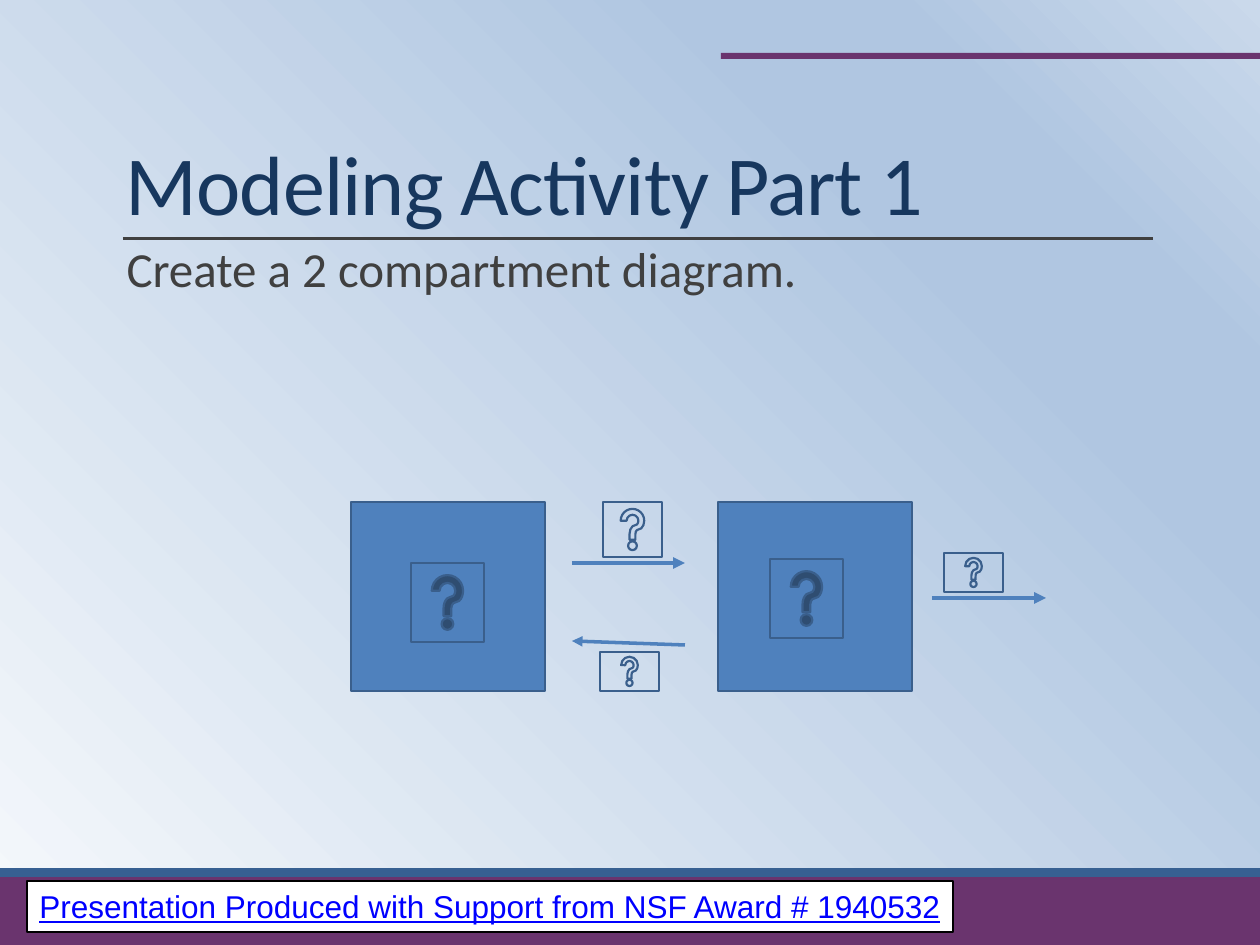
from dataclasses import dataclass
from typing import Optional

import lxml.etree
import pptx
import pptx.dml.color
import pptx.enum.shapes
import pptx.enum.text
import pptx.oxml
import pptx.oxml.ns
import pptx.util

RGBColor = pptx.dml.color.RGBColor
SHAPES = pptx.enum.shapes.MSO_SHAPE
ANCHOR = pptx.enum.text.MSO_ANCHOR

PURPLE = RGBColor(0x6A, 0x34, 0x6E)
STEEL = RGBColor(0x37, 0x60, 0x92)
BLUE = RGBColor(0x4F, 0x81, 0xBD)
EDGE = RGBColor(0x3A, 0x5F, 0x8C)
NAVY = RGBColor(0x17, 0x37, 0x5E)
GREY = RGBColor(0x40, 0x40, 0x40)
LINK = RGBColor(0x00, 0x00, 0xFF)
WHITE = RGBColor(0xFF, 0xFF, 0xFF)
BLACK = RGBColor(0x00, 0x00, 0x00)

GRADIENT = [(0, "F6F9FC"), (74, "B0C6E1"), (83, "B0C6E1"), (100, "CAD9EB")]
PX_PER_INCH = 126
SQUARE_TOP, SQUARE_WIDTH, SQUARE_HEIGHT = 502, 194, 189


@dataclass
class Block:
    left: int
    top: int
    width: int
    height: int
    fill: Optional[RGBColor] = None
    edge: Optional[RGBColor] = None
    kind: int = SHAPES.RECTANGLE


@dataclass
class Line:
    start: tuple[int, int]
    end: tuple[int, int]
    color: RGBColor = BLUE
    weight: float = 2.25
    arrow: bool = True


def px(length: int) -> int:
    return round(length * pptx.util.Inches(1) / PX_PER_INCH)


def place(shape, left: int, top: int, width: int, height: int) -> None:
    shape.left, shape.top = px(left), px(top)
    shape.width, shape.height = px(width), px(height)


def add_xml(parent, markup: str):
    """Append DrawingML markup, whose prefix is a, to an element."""
    namespace = pptx.oxml.ns.nsdecls("a")
    head, mark, rest = markup.partition(">")
    if head.endswith("/"):
        head, mark = head[:-1], "/>"
    element = pptx.oxml.parse_xml(f"{head} {namespace}{mark}{rest}")
    parent.append(element)
    return element


def draw_block(slide, block: Block):
    shape = slide.shapes.add_shape(
        block.kind, px(block.left), px(block.top), px(block.width), px(block.height))
    shape.shadow.inherit = False
    if block.fill is None:
        shape.fill.background()
    else:
        shape.fill.solid()
        shape.fill.fore_color.rgb = block.fill
    if block.edge is None:
        shape.line.fill.background()
    else:
        shape.line.color.rgb = block.edge
        shape.line.width = pptx.util.Pt(1.25)
    return shape


def draw_line(slide, line: Line) -> None:
    connector = slide.shapes.add_connector(
        pptx.enum.shapes.MSO_CONNECTOR.STRAIGHT,
        *map(px, line.start), *map(px, line.end))
    connector.line.color.rgb = line.color
    connector.line.width = pptx.util.Pt(line.weight)
    if line.arrow:
        add_xml(connector.line._get_or_add_ln(), '<a:tailEnd type="triangle"/>')
    add_xml(connector._element.spPr, "<a:effectLst/>")


def write_text(shape, text: str, *, size: float, color: RGBColor, font: str = "Calibri",
               anchor=ANCHOR.TOP, wrap: bool = True, underline: bool = False,
               line_spacing: float = 1.0, space_after: float = 0,
               tracking: int = 0, side_inset: Optional[int] = None) -> None:
    frame = shape.text_frame
    frame.auto_size = pptx.enum.text.MSO_AUTO_SIZE.NONE
    frame.word_wrap = wrap
    frame.vertical_anchor = anchor
    if side_inset is not None:
        frame.margin_left = frame.margin_right = px(side_inset)
    para = frame.paragraphs[0]
    para.alignment = pptx.enum.text.PP_ALIGN.LEFT
    para.line_spacing = line_spacing
    para.space_before = pptx.util.Pt(0)
    para.space_after = pptx.util.Pt(space_after)
    span = para.add_run()
    span.text = text
    span.font.name = font
    span.font.size = pptx.util.Pt(size)
    span.font.color.rgb = color
    span.font.underline = underline
    if tracking:
        span.font._element.set("spc", str(tracking))


def set_background(slide) -> None:
    slide.background.fill.gradient()
    gradient = slide.background._cSld.bg.bgPr.find(pptx.oxml.ns.qn("a:gradFill"))
    for child in list(gradient):
        gradient.remove(child)
    stops = "".join(
        f'<a:gs pos="{position * 1000}"><a:srgbClr val="{color}"/></a:gs>'
        for position, color in GRADIENT)
    add_xml(gradient, f"<a:gsLst>{stops}</a:gsLst>")
    add_xml(gradient, '<a:lin ang="18900000" scaled="0"/>')


def set_blank_bullet(para) -> None:
    properties = para._p.get_or_add_pPr()
    properties.set("marL", str(pptx.util.Inches(0.1)))
    properties.set("indent", str(-pptx.util.Inches(0.1)))
    add_xml(properties, '<a:buClr><a:srgbClr val="4F81BD"/></a:buClr>')
    add_xml(properties, '<a:buChar char=" "/>')


def main() -> None:
    deck = pptx.Presentation()
    deck.slide_width = pptx.util.Inches(10)
    deck.slide_height = pptx.util.Inches(7.5)
    page = deck.slides.add_slide(deck.slide_layouts[1])
    set_background(page)

    # Frame: footer bar, top accent, footer stripe, rule under the title
    for bar in (Block(0, 872, 1260, 73, PURPLE),
                Block(721, 53, 539, 6, PURPLE),
                Block(0, 868, 1260, 9, STEEL)):
        draw_block(page, bar)
    draw_line(page, Line((123, 239), (1153, 239), GREY, 1.75, arrow=False))

    # Funding credit
    credit = draw_block(page, Block(27, 881, 926, 51, WHITE, BLACK))
    write_text(credit, "Presentation Produced with Support from NSF Award # 1940532",
               size=18, color=LINK, font="Arial", wrap=False, underline=True)

    # Title and instruction
    title, body = page.shapes.title, page.placeholders[1]
    place(title, 113, 39, 1040, 200)
    write_text(title, "Modeling Activity Part 1", size=48, color=NAVY,
               anchor=ANCHOR.BOTTOM, line_spacing=0.85, tracking=-50)
    place(body, 113, 239, 1040, 554)
    set_blank_bullet(body.text_frame.paragraphs[0])
    write_text(body, "Create a 2 compartment diagram.", size=28, color=GREY,
               line_spacing=0.9, space_after=2, side_inset=0)

    # Two compartments
    for left in (351, 718):
        draw_block(page, Block(left, SQUARE_TOP, SQUARE_WIDTH, SQUARE_HEIGHT, BLUE, EDGE))

    # Flows between and out of the compartments
    for flow in (Line((572, 563), (685, 563)),
                 Line((685, 645), (572, 641), weight=2),
                 Line((932, 598), (1046, 598))):
        draw_line(page, flow)

    # Question marks: filled in the compartments, outlined on the flows
    for left, top, width, height, fill in ((411, 563, 73, 79, BLUE),
                                           (770, 559, 73, 79, BLUE),
                                           (603, 502, 59, 55, None),
                                           (600, 652, 59, 39, None),
                                           (944, 553, 59, 39, None)):
        draw_block(page, Block(left, top, width, height, fill, EDGE,
                               SHAPES.ACTION_BUTTON_HELP))

    deck.save("out.pptx")


if __name__ == "__main__":
    main()
